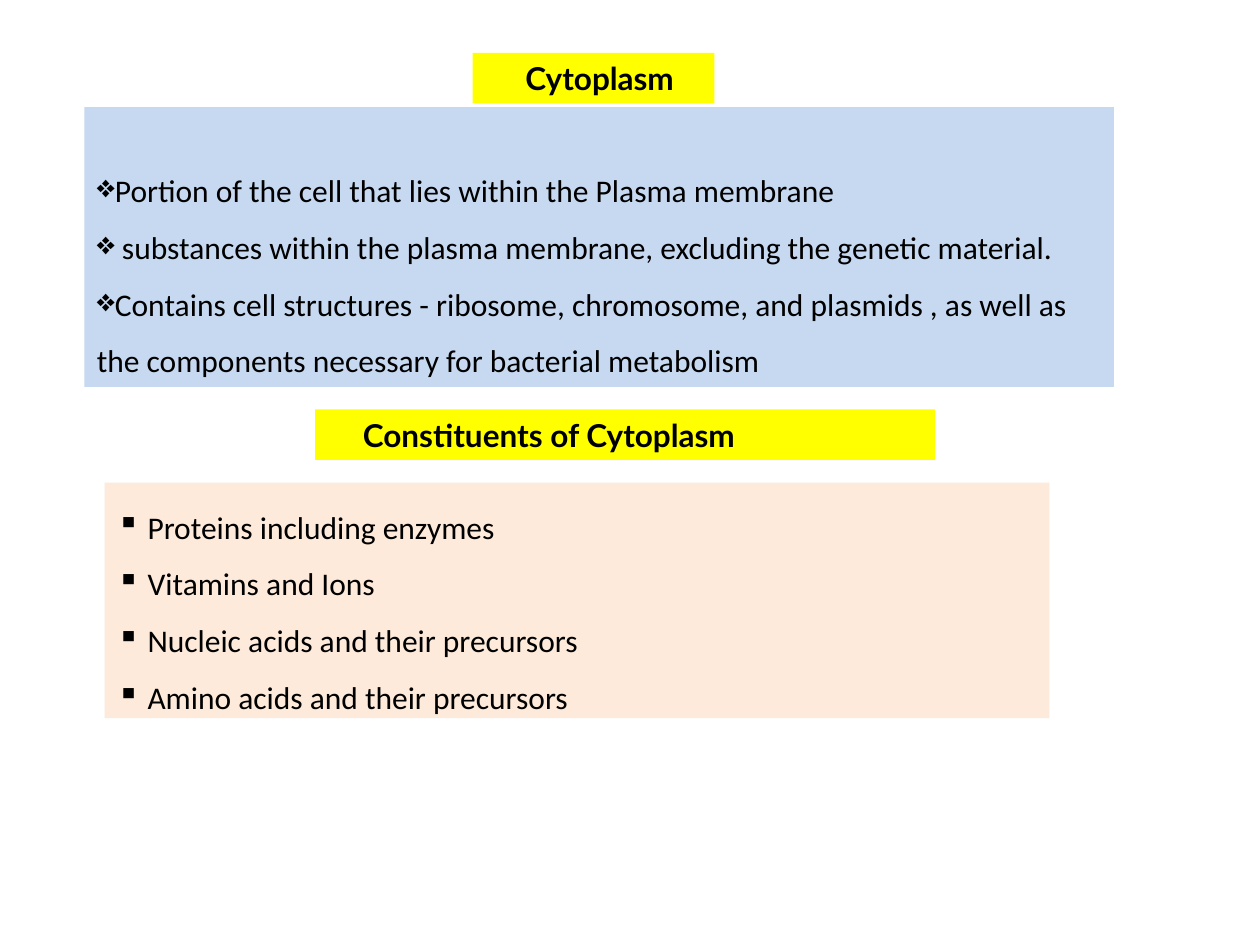
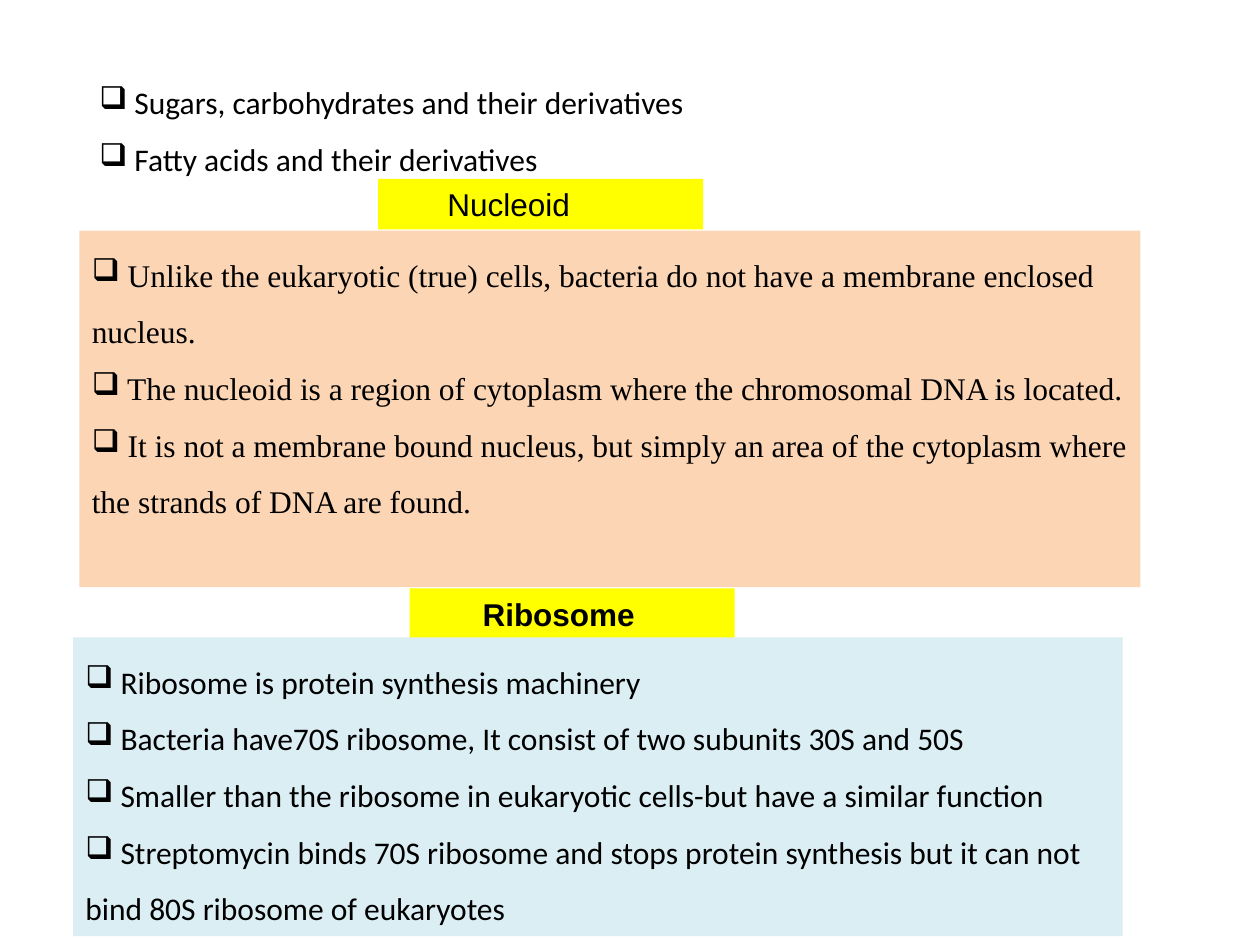
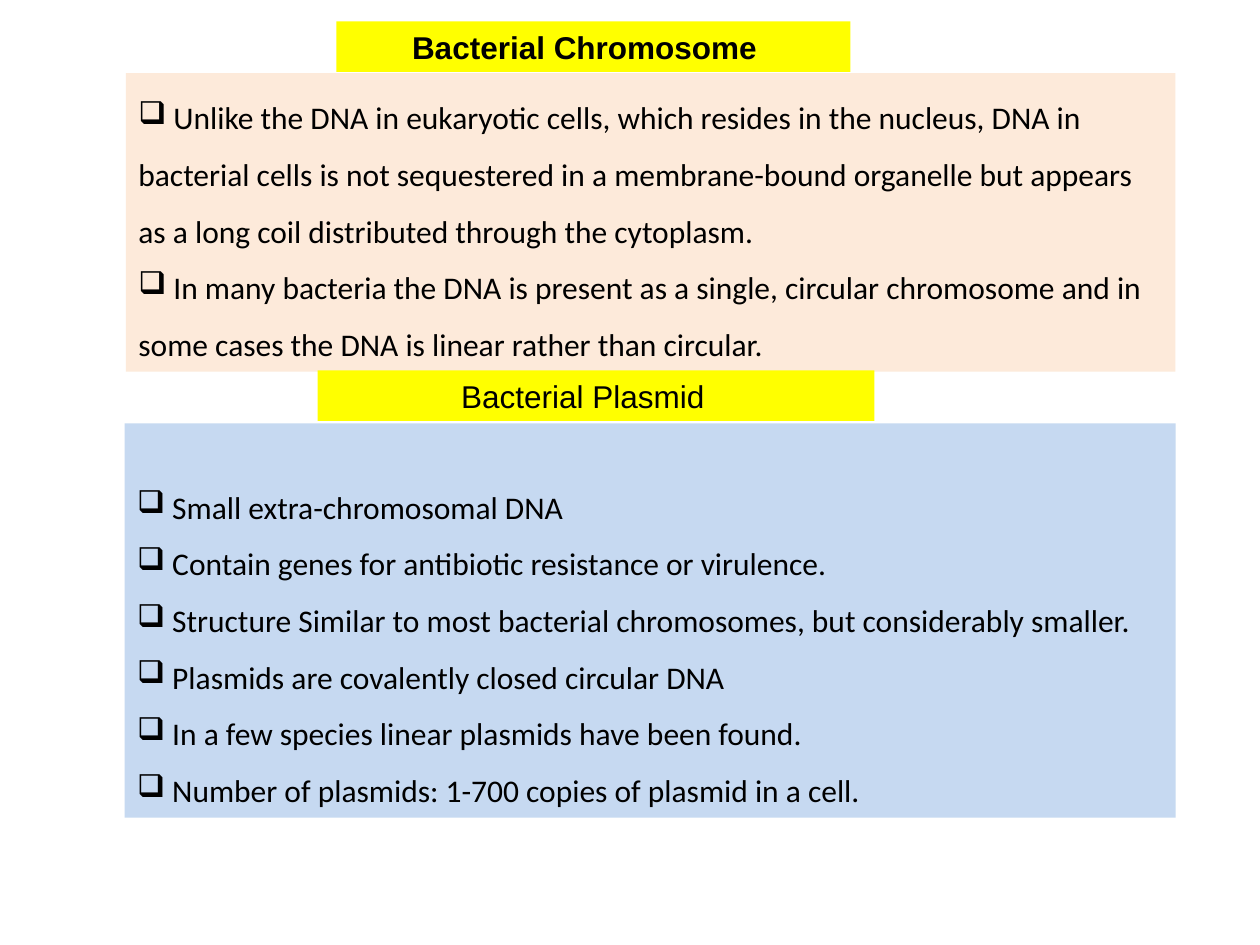
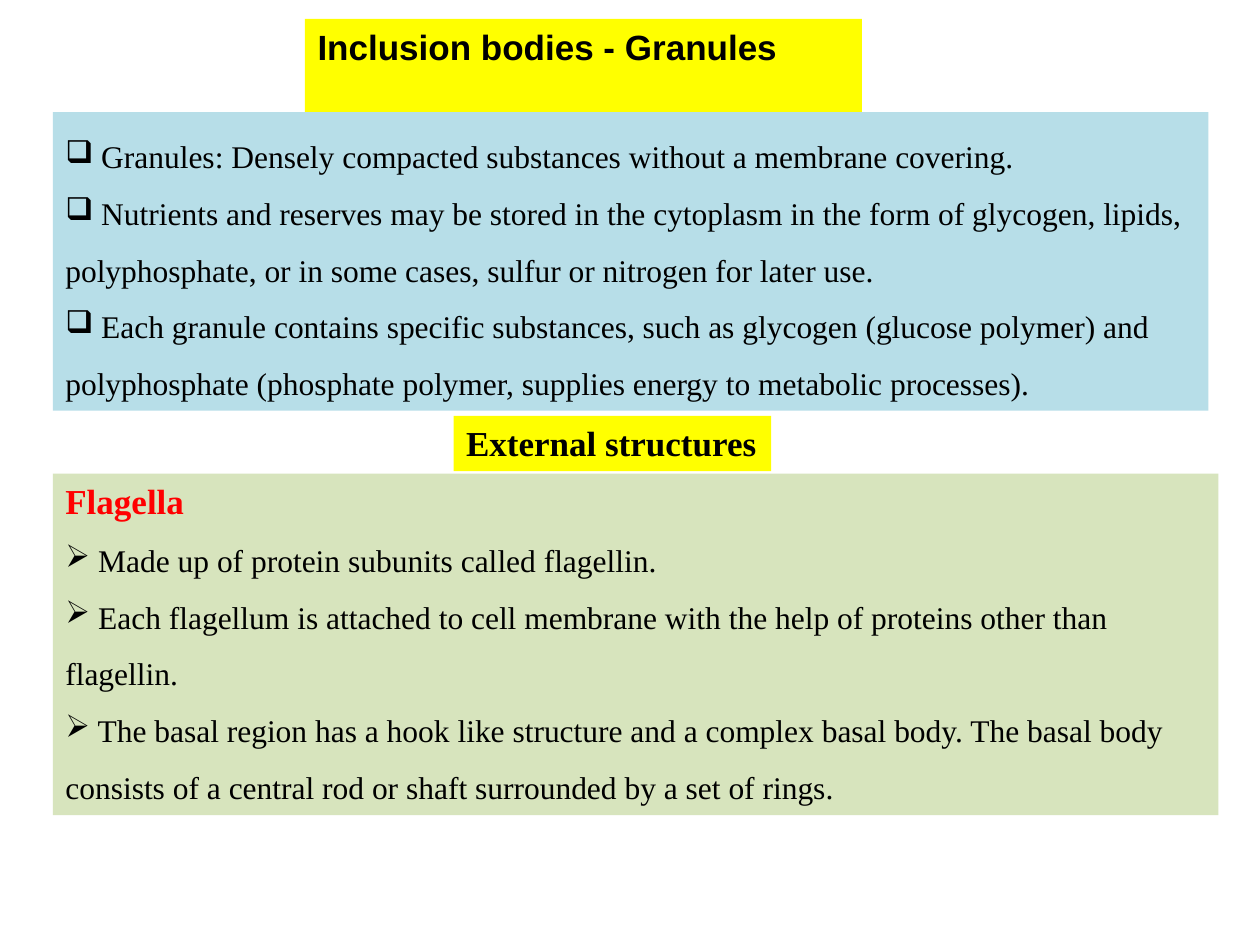
from lxml import etree
from pptx import Presentation
from pptx.dml.color import RGBColor
from pptx.enum import text
from pptx.oxml import ns
from pptx.util import Inches, Pt

BLACK = RGBColor(0x00, 0x00, 0x00)
RED = RGBColor(0xFF, 0x00, 0x00)
YELLOW = RGBColor(0xFF, 0xFF, 0x00)
BLUE = RGBColor(0xC6, 0xD9, 0xF1)
CREAM = RGBColor(0xFD, 0xEA, 0xDA)
PEACH = RGBColor(0xFC, 0xD5, 0xB5)
PALE_AQUA = RGBColor(0xDB, 0xEE, 0xF4)
AQUA = RGBColor(0xB7, 0xDE, 0xE8)
GREEN = RGBColor(0xD7, 0xE4, 0xBD)

SANS = "Calibri"
SERIF = "Times New Roman"
LATO = "Lato"
ARIAL = "Arial"

DIAMOND = "❖"
SQUARE = "▪"
CHECKBOX = "❑"
ARROW = "➢"

MARGIN_X = 0.1
MARGIN_Y = 0.05
EMPTY_LINE = 0.31
TITLE_ONLY = 5


def format_paragraph(paragraph, font, size=18, bold=False, color=BLACK):
    paragraph.alignment = text.PP_ALIGN.LEFT
    for run in paragraph.runs:
        run.font.name = font
        run.font.size = Pt(size)
        run.font.bold = bold
        run.font.color.rgb = color


def format_frame(shape, indent=0, gap_above=0, wrap=True):
    frame = shape.text_frame
    frame.word_wrap = wrap
    frame.auto_size = text.MSO_AUTO_SIZE.NONE
    frame.vertical_anchor = text.MSO_ANCHOR.TOP
    frame.margin_left = Inches(MARGIN_X + indent)
    frame.margin_right = Inches(MARGIN_X)
    frame.margin_top = Inches(MARGIN_Y + gap_above)
    frame.margin_bottom = Inches(MARGIN_Y)
    return frame


def fill_shape(shape, color):
    shape.fill.solid()
    shape.fill.fore_color.rgb = color


def format_heading(shape, caption, font, size=18, bold=True, indent=0, wrap=True):
    fill_shape(shape, YELLOW)
    frame = format_frame(shape, indent, wrap=wrap)
    frame.text = caption
    format_paragraph(frame.paragraphs[0], font, size, bold)


def add_title(slide, box, caption, font, **style):
    title = slide.shapes.title
    title.left, title.top, title.width, title.height = map(Inches, box)
    format_heading(title, caption, font, **style)


def add_heading(slide, box, caption, font, **style):
    heading = slide.shapes.add_textbox(*map(Inches, box))
    format_heading(heading, caption, font, **style)


def add_bullet(paragraph, symbol):
    paragraph.line_spacing = 1.5
    properties = paragraph._p.get_or_add_pPr()
    properties.set("marL", "0")
    properties.set("indent", "0")
    etree.SubElement(properties, ns.qn("a:buChar"), char=symbol)


def add_panel(slide, box, color, symbol, items, font=SANS, gap_above=0, lead=None):
    panel = slide.shapes.add_textbox(*map(Inches, box))
    if color is not None:
        fill_shape(panel, color)
    frame = format_frame(panel, gap_above=gap_above)
    frame.text = "\n".join(([lead] if lead else []) + items)
    paragraphs = list(frame.paragraphs)
    if lead:
        format_paragraph(paragraphs.pop(0), font, 20, True, RED)
    for paragraph in paragraphs:
        format_paragraph(paragraph, font)
        add_bullet(paragraph, symbol)


def add_slide(presentation):
    return presentation.slides.add_slide(presentation.slide_layouts[TITLE_ONLY])


def build_cytoplasm(slide):
    add_title(slide, (3.75, 0.42, 1.92, 0.4), "Cytoplasm", LATO, indent=0.32)
    add_panel(slide, (0.67, 0.85, 8.17, 2.22), BLUE, DIAMOND, [
        "Portion of the cell that lies within the Plasma membrane",
        " substances within the plasma membrane, excluding the genetic material.",
        "Contains cell structures - ribosome, chromosome, and plasmids , as well as "
        "the components necessary for bacterial metabolism",
    ], gap_above=EMPTY_LINE)
    add_heading(slide, (2.5, 3.25, 4.92, 0.4), "Constituents of Cytoplasm", LATO, indent=0.28)
    add_panel(slide, (0.83, 3.83, 7.5, 1.87), CREAM, SQUARE, [
        " Proteins including enzymes",
        " Vitamins and Ions",
        " Nucleic acids and their precursors",
        " Amino acids and their precursors",
    ])


def build_nucleoid(slide):
    add_title(slide, (3, 1.42, 2.58, 0.4), "Nucleoid", ARIAL, bold=False, indent=0.45)
    add_panel(slide, (0.69, 0.46, 8.25, 1.31), None, CHECKBOX, [
        " Sugars, carbohydrates and their derivatives",
        " Fatty acids and their derivatives",
    ])
    add_panel(slide, (0.63, 1.83, 8.42, 2.83), PEACH, CHECKBOX, [
        " Unlike the eukaryotic (true) cells, bacteria do not have a membrane enclosed nucleus.",
        " The nucleoid is a region of cytoplasm where the chromosomal DNA is located.",
        " It is not a membrane bound nucleus, but simply an area of the cytoplasm "
        "where the strands of DNA are found.",
    ], font=SERIF)
    add_heading(slide, (3.25, 4.67, 2.58, 0.4), "Ribosome", ARIAL, indent=0.48)
    add_panel(slide, (0.58, 5.06, 8.33, 2.37), PALE_AQUA, CHECKBOX, [
        " Ribosome is protein synthesis machinery",
        " Bacteria have70S ribosome, It consist of two subunits 30S and 50S",
        " Smaller than the ribosome in eukaryotic cells-but have a similar function",
        " Streptomycin binds 70S ribosome and stops protein synthesis but it can not "
        "bind 80S ribosome of eukaryotes",
    ])


def build_chromosome(slide):
    add_title(slide, (2.67, 0.17, 4.08, 0.4), "Bacterial Chromosome", ARIAL, indent=0.5)
    add_panel(slide, (1, 0.58, 8.33, 2.37), CREAM, CHECKBOX, [
        " Unlike the DNA in eukaryotic cells, which resides in the nucleus, DNA in "
        "bacterial cells is not sequestered in a membrane-bound organelle but appears "
        "as a long coil distributed through the cytoplasm.",
        " In many bacteria the DNA is present as a single, circular chromosome and in "
        "some cases the DNA is linear rather than circular.",
    ])
    add_heading(slide, (2.52, 2.94, 4.42, 0.4), "Bacterial Plasmid", ARIAL,
                bold=False, indent=1.04)
    add_panel(slide, (0.99, 3.36, 8.34, 3.13), BLUE, CHECKBOX, [
        " Small extra-chromosomal DNA",
        " Contain genes for antibiotic resistance or virulence.",
        " Structure Similar to most bacterial chromosomes, but considerably smaller.",
        " Plasmids are covalently closed circular DNA",
        " In a few species linear plasmids have been found.",
        " Number of plasmids: 1-700 copies of plasmid in a cell.",
    ], gap_above=EMPTY_LINE)


def build_inclusions(slide):
    add_title(slide, (2.42, 0.15, 4.42, 0.74), "Inclusion bodies - Granules", ARIAL, size=20)
    add_panel(slide, (0.42, 0.89, 9.17, 2.37), AQUA, CHECKBOX, [
        " Granules: Densely compacted substances without a membrane covering.",
        " Nutrients and reserves may be stored in the cytoplasm in the form of glycogen, "
        "lipids, polyphosphate, or in some cases, sulfur or nitrogen for later use.",
        " Each granule contains specific substances, such as glycogen (glucose polymer) and "
        "polyphosphate (phosphate polymer, supplies energy to metabolic processes).",
    ], font=SERIF)
    add_heading(slide, (3.6, 3.3, 2.52, 0.44), "External structures", SERIF,
                size=20, wrap=False)
    add_panel(slide, (0.42, 3.76, 9.25, 2.71), GREEN, ARROW, [
        " Made up of protein subunits called flagellin.",
        " Each flagellum is attached to cell membrane with the help of proteins "
        "other than flagellin.",
        " The basal region has a hook like structure and a complex basal body. The basal "
        "body consists of a central rod or shaft surrounded by a set of rings.",
    ], font=SERIF, lead="Flagella")


def main():
    presentation = Presentation()
    presentation.slide_width = Inches(10)
    presentation.slide_height = Inches(7.5)
    for build in (build_cytoplasm, build_nucleoid, build_chromosome, build_inclusions):
        build(add_slide(presentation))
    presentation.save("out.pptx")


if __name__ == "__main__":
    main()
